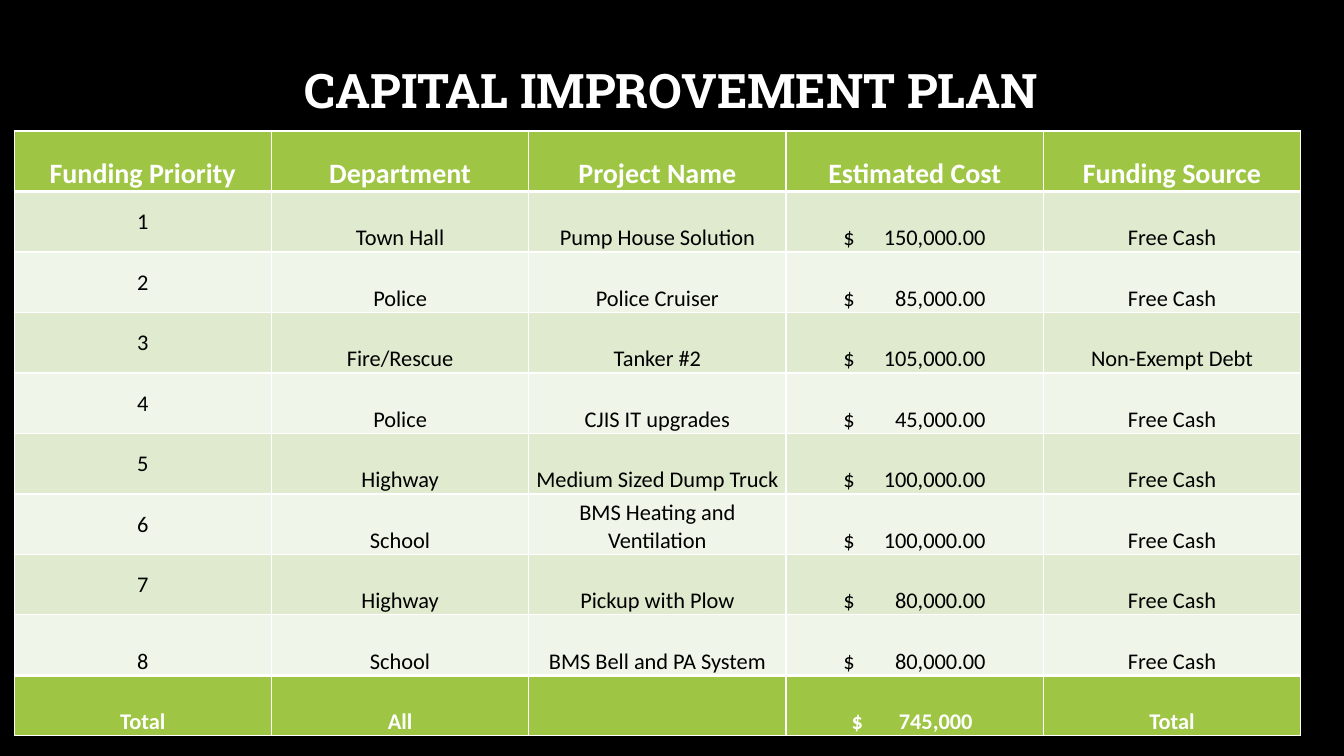
from lxml.etree import SubElement
from pptx import Presentation
from pptx.dml.color import RGBColor
from pptx.enum.text import MSO_ANCHOR as Anchor, PP_ALIGN as Align
from pptx.oxml.ns import qn
from pptx.util import Inches, Pt

BLACK = RGBColor(0x00, 0x00, 0x00)
WHITE = RGBColor(0xFF, 0xFF, 0xFF)
GREEN = RGBColor(0x9E, 0xC5, 0x44)
BANDS = [RGBColor(0xDF, 0xEA, 0xCF), RGBColor(0xF0, 0xF5, 0xE9)]

TITLE = "CAPITAL IMPROVEMENT PLAN"
HEADINGS = ("Funding Priority", "Department", "Project Name", "Estimated Cost", "Funding Source")
PROJECTS = [
    ("1", "Town Hall", "Pump House Solution", "$\t150,000.00", "Free Cash"),
    ("2", "Police", "Police Cruiser", "$\t85,000.00", "Free Cash"),
    ("3", "Fire/Rescue", "Tanker #2", "$\t105,000.00", "Non-Exempt Debt"),
    ("4", "Police", "CJIS IT upgrades", "$\t45,000.00", "Free Cash"),
    ("5", "Highway", "Medium Sized Dump Truck", "$\t100,000.00", "Free Cash"),
    ("6", "School", "BMS Heating and Ventilation", "$\t100,000.00", "Free Cash"),
    ("7", "Highway", "Pickup with Plow", "$\t80,000.00", "Free Cash"),
    ("8", "School", "BMS Bell and PA System", "$\t80,000.00", "Free Cash"),
]
TOTALS = ("Total", "All", "", "$\t745,000", "Total")
ROWS = [HEADINGS, *PROJECTS, TOTALS]
LAST = len(ROWS) - 1


def set_borders(cell, top, bottom):
    properties = cell._tc.get_or_add_tcPr()
    for side, width in (("L", 1), ("R", 1), ("T", top), ("B", bottom)):
        line = SubElement(properties, qn(f"a:ln{side}"), w=str(Pt(width)))
        color = SubElement(SubElement(line, qn("a:solidFill")), qn("a:srgbClr"))
        color.set("val", str(WHITE))


def set_amount_layout(cell, paragraph, margin, width):
    cell.margin_left = Inches(margin)
    paragraph.alignment = Align.LEFT
    stops = SubElement(paragraph._p.get_or_add_pPr(), qn("a:tabLst"))
    SubElement(stops, qn("a:tab"), pos=str(Inches(width)), algn="r")


def style_font(font, name, size, color, bold):
    font.name, font.size, font.bold = name, Pt(size), bold
    font.color.rgb = color


def fill_cell(cell, text, row, column):
    strong = row in (0, LAST)
    set_borders(cell, 3 if row in (1, LAST) else 1, 3 if row in (0, LAST - 1) else 1)
    cell.fill.solid()
    cell.fill.fore_color.rgb = GREEN if strong else BANDS[(row - 1) % 2]
    cell.margin_left = cell.margin_right = cell.margin_top = Inches(0.01)
    cell.margin_bottom = 0
    centered = column == 0 and 0 < row < LAST - 1
    cell.vertical_anchor = Anchor.MIDDLE if centered else Anchor.BOTTOM
    cell.text = text
    paragraph = cell.text_frame.paragraphs[0]
    paragraph.alignment = Align.CENTER
    if "\t" in text:
        margin, width = (0.65, 1.2) if row == LAST else (0.57, 1.41)
        set_amount_layout(cell, paragraph, margin, width)
    style_font(paragraph.font, "Calibri", 16 if row else 20, WHITE if strong else BLACK, strong)


def main():
    deck = Presentation()
    deck.slide_width, deck.slide_height = Inches(13.33), Inches(7.5)
    slide = deck.slides.add_slide(deck.slide_layouts[5])
    slide.background.fill.solid()
    slide.background.fill.fore_color.rgb = BLACK

    title = slide.shapes.title
    title.left, title.top, title.width, title.height = map(Inches, (1, 0.2, 11.32, 1.45))
    title.text_frame.text = TITLE
    title.text_frame.vertical_anchor = Anchor.MIDDLE
    heading = title.text_frame.paragraphs[0]
    heading.alignment = Align.CENTER
    heading.line_spacing = 0.9
    style_font(heading.font, "Roboto Slab", 34, WHITE, True)

    plan = slide.shapes.add_table(
        len(ROWS), len(HEADINGS), Inches(0.14), Inches(1.3), Inches(12.76), Inches(6)
    ).table
    plan.first_row = plan.horz_banding = False
    for row, entries in enumerate(ROWS):
        for column, text in enumerate(entries):
            fill_cell(plan.cell(row, column), text, row, column)

    deck.save("out.pptx")


if __name__ == "__main__":
    main()
